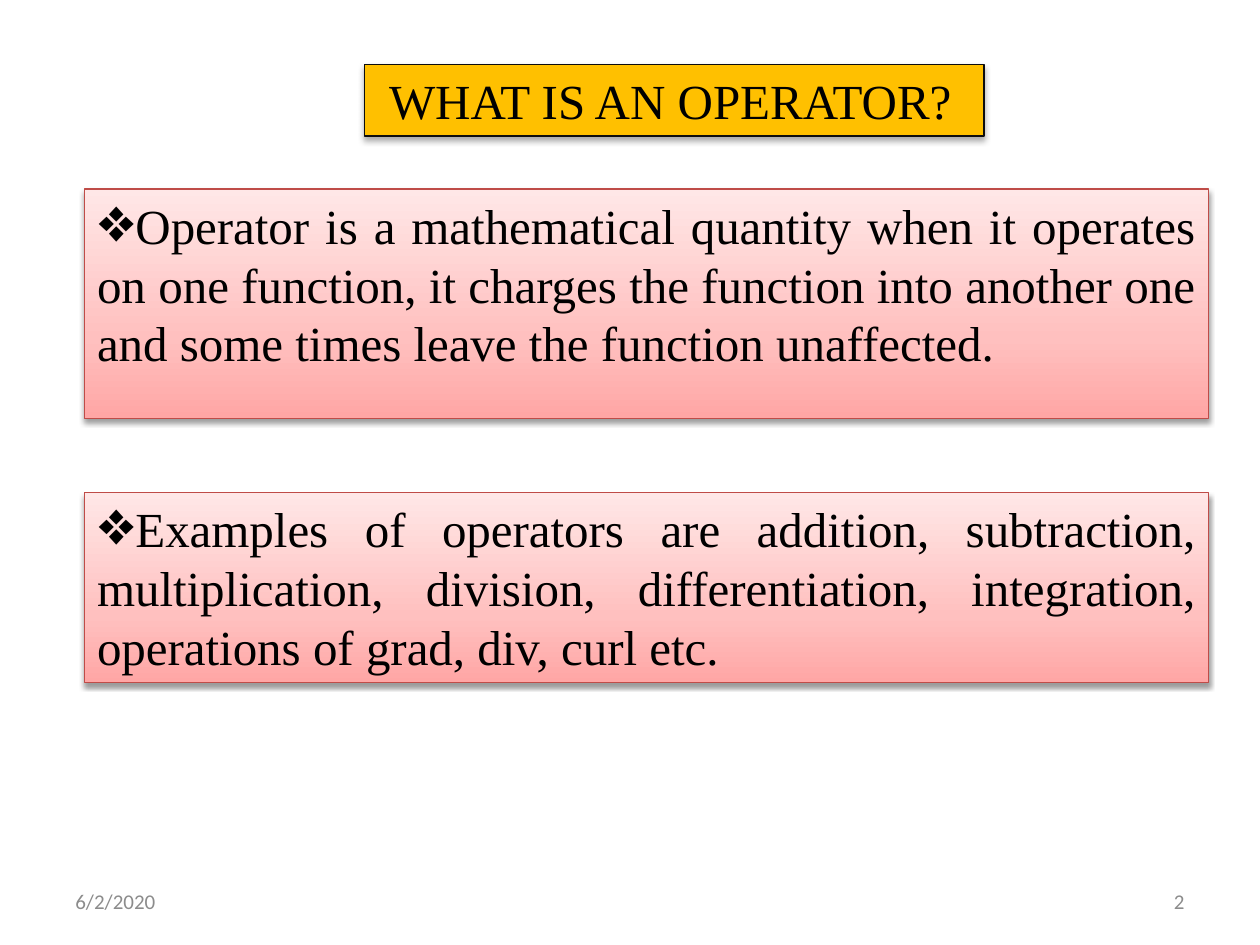
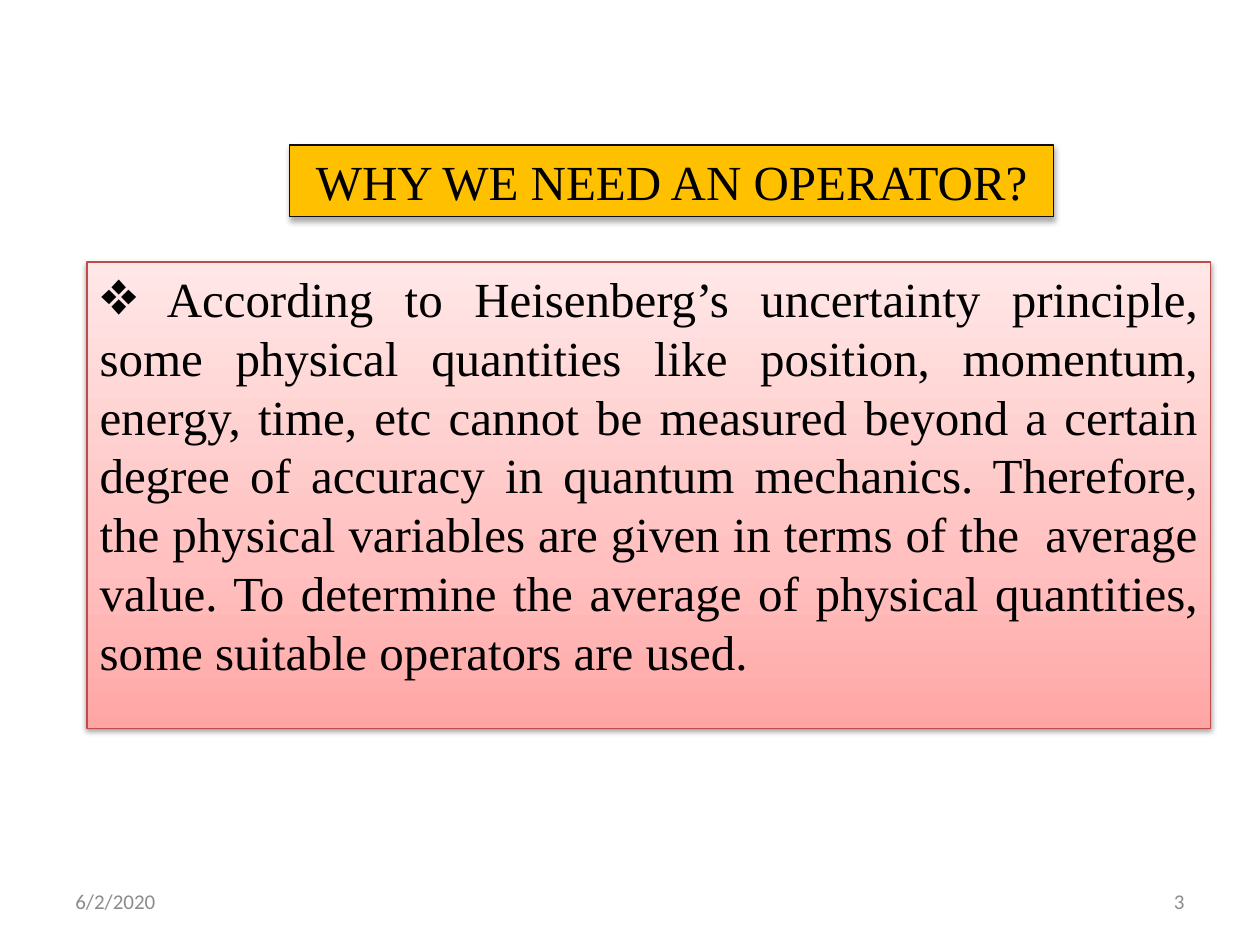
import copy
from dataclasses import dataclass

import pptx
import pptx.dml.color
import pptx.enum.text
import pptx.oxml
import pptx.oxml.ns
import pptx.util

# Scale: 100 px to the inch
EMU_PER_PX = 9144

# Shared style
BLACK = pptx.dml.color.RGBColor(0x00, 0x00, 0x00)
NEAR_BLACK = pptx.dml.color.RGBColor(0x0D, 0x0D, 0x0D)
AMBER = pptx.dml.color.RGBColor(0xFF, 0xC0, 0x00)
RED_EDGE = pptx.dml.color.RGBColor(0xBF, 0x4C, 0x48)
GREY = pptx.dml.color.RGBColor(0x8C, 0x8C, 0x8C)
PINK_STOPS = (
    (0, pptx.dml.color.RGBColor(0xFF, 0xA6, 0xA5)),
    (0.35, pptx.dml.color.RGBColor(0xFF, 0xC0, 0xBF)),
    (1, pptx.dml.color.RGBColor(0xFF, 0xE7, 0xE7)),
)
SERIF = "Times New Roman"
SANS = "Calibri"
ALIGN = pptx.enum.text.PP_ALIGN
ANCHOR = pptx.enum.text.MSO_ANCHOR
DATE = "6/2/2020"
FIRST_NUMBER = 2
TITLE_ONE_BODY, TITLE_TWO_BODIES = 1, 3


@dataclass(frozen=True)
class Area:
    left: int
    top: int
    width: int
    height: int


@dataclass(frozen=True)
class Shadow:
    opacity: int
    blur: float
    distance: float


@dataclass(frozen=True)
class Panel:
    area: Area
    text: str


@dataclass(frozen=True)
class Topic:
    title: str
    title_area: Area
    panels: tuple[Panel, ...]
    title_tail: str = ""


TITLE_SHADOW = Shadow(32, 3.5, 2.2)
PANEL_SHADOW = Shadow(38, 3.15, 1.6)
DATE_AREA = Area(50, 695, 233, 40)
NUMBER_AREA = Area(717, 695, 233, 40)

TOPICS = (
    Topic(
        "WHAT IS AN OPERATOR?",
        Area(289, 51, 492, 57),
        (
            Panel(
                Area(67, 150, 892, 182),
                "Operator is a mathematical quantity when it operates on one "
                "function, it charges the function into another one and some "
                "times leave the function unaffected.",
            ),
            Panel(
                Area(67, 391, 892, 151),
                "Examples of operators are addition, subtraction, "
                "multiplication, division, differentiation, integration, "
                "operations of grad, div, curl etc.",
            ),
        ),
        title_tail=" ",
    ),
    Topic(
        "WHY WE NEED AN OPERATOR?",
        Area(230, 115, 606, 57),
        (
            Panel(
                Area(69, 208, 892, 370),
                " According to Heisenberg’s uncertainty principle, some "
                "physical quantities like position, momentum, energy, time, "
                "etc cannot be measured beyond a certain degree of accuracy "
                "in quantum mechanics. Therefore, the physical variables are "
                "given in terms of the  average value. To determine the "
                "average of physical quantities, some suitable operators are "
                "used.",
            ),
        ),
    ),
)


def px(length: int) -> pptx.util.Emu:
    return pptx.util.Emu(length * EMU_PER_PX)


def place(box, area: Area) -> None:
    box.left, box.top = px(area.left), px(area.top)
    box.width, box.height = px(area.width), px(area.height)


def write(box, text: str, font: str, size: int, color, align, anchor):
    """Set the only paragraph of a box and return it."""
    frame = box.text_frame
    frame.text = text
    frame.word_wrap = True
    frame.auto_size = pptx.enum.text.MSO_AUTO_SIZE.NONE
    frame.vertical_anchor = anchor
    para = frame.paragraphs[0]
    para.alignment = align
    para.space_before = pptx.util.Pt(0)
    for span in para.runs:
        span.font.name = font
        span.font.size = pptx.util.Pt(size)
        span.font.color.rgb = color
    return para


def outline(box, color, shadow: Shadow) -> None:
    """Draw a thin edge and a shadow falling straight down."""
    box.line.color.rgb = color
    box.line.width = pptx.util.Pt(0.75)
    box._element.spPr.append(pptx.oxml.parse_xml(
        f'<a:effectLst {pptx.oxml.ns.nsdecls("a")}>'
        f'<a:outerShdw blurRad="{pptx.util.Pt(shadow.blur)}" '
        f'dist="{pptx.util.Pt(shadow.distance)}" dir="5400000" rotWithShape="0">'
        f'<a:srgbClr val="{BLACK}"><a:alpha val="{shadow.opacity * 1000}"/>'
        '</a:srgbClr></a:outerShdw></a:effectLst>'))


def fill_pink(box) -> None:
    box.fill.gradient()
    box.fill.gradient_angle = 90
    stop_list = box._element.spPr.find(".//" + pptx.oxml.ns.qn("a:gsLst"))
    stop_list.append(copy.deepcopy(stop_list[0]))
    for stop, (position, color) in zip(box.fill.gradient_stops, PINK_STOPS):
        stop.position = position
        stop.color.rgb = color


def add_diamond_bullet(para) -> None:
    properties = para._p.get_or_add_pPr()
    properties.set("marL", "0")
    properties.set("indent", "0")
    declaration = pptx.oxml.ns.nsdecls("a")
    for tag in (f'a:buFont {declaration} typeface="{SERIF}"',
                f'a:buChar {declaration} char="❖"'):
        properties.append(pptx.oxml.parse_xml(f"<{tag}/>"))


def draw_title(box, topic: Topic) -> None:
    place(box, topic.title_area)
    para = write(box, topic.title, SERIF, 28, BLACK, ALIGN.CENTER, ANCHOR.TOP)
    if topic.title_tail:
        tail = para.add_run()
        tail.text = topic.title_tail
        tail.font.name = SERIF
        tail.font.size = pptx.util.Pt(18)
    box.fill.solid()
    box.fill.fore_color.rgb = AMBER
    outline(box, NEAR_BLACK, TITLE_SHADOW)


def draw_panel(box, panel: Panel) -> None:
    place(box, panel.area)
    para = write(box, panel.text, SERIF, 28, BLACK, ALIGN.JUSTIFY, ANCHOR.TOP)
    add_diamond_bullet(para)
    fill_pink(box)
    outline(box, RED_EDGE, PANEL_SHADOW)


def draw_footer(page, number: int) -> None:
    for area, text, align in ((DATE_AREA, DATE, ALIGN.LEFT),
                              (NUMBER_AREA, str(number), ALIGN.RIGHT)):
        box = page.shapes.add_textbox(0, 0, 0, 0)
        place(box, area)
        write(box, text, SANS, 12, GREY, align, ANCHOR.MIDDLE)


def main() -> None:
    deck = pptx.Presentation()
    deck.slide_width, deck.slide_height = px(1000), px(750)
    for number, topic in enumerate(TOPICS, FIRST_NUMBER):
        two_bodies = len(topic.panels) == 2
        layout = TITLE_TWO_BODIES if two_bodies else TITLE_ONE_BODY
        page = deck.slides.add_slide(deck.slide_layouts[layout])
        title, *bodies = page.placeholders
        draw_title(title, topic)
        for body, panel in zip(bodies, topic.panels):
            draw_panel(body, panel)
        draw_footer(page, number)
    deck.save("out.pptx")


if __name__ == "__main__":
    main()
